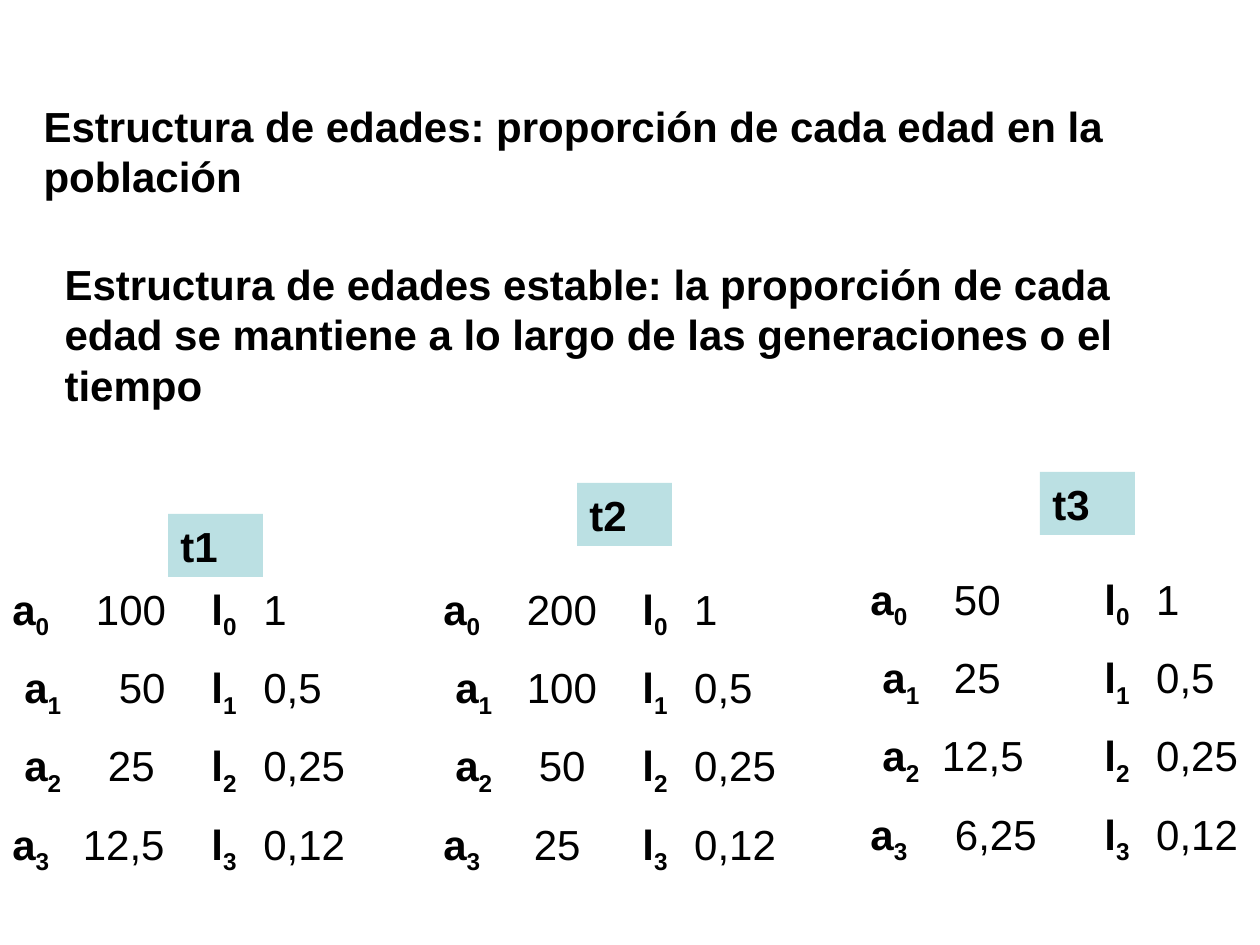
from lxml.etree import SubElement
from pptx import Presentation
from pptx.dml.color import RGBColor
from pptx.enum.shapes import MSO_SHAPE
from pptx.enum.text import MSO_ANCHOR, MSO_AUTO_SIZE, PP_ALIGN
from pptx.oxml.ns import qn
from pptx.util import Pt

EMU_PER_PX = 914400 / 126
LABEL_FILL = "BBE0E3"
LABEL_W, LABEL_H = 95, 63
INDENT = 12
SPACE_W = 12
SURVIVAL_GAP = 27
SURVIVAL = ["1", "0,5", "0,25", "0,12"]

GENERATIONS = [
    dict(name="t1", label=(168, 514), ages=(0, 577, 189, 368), survival=(199, 577, 168, 330),
         counts=["100", "50", "25", "12,5"], gaps=[47, 58, 47, 34]),
    dict(name="t2", label=(577, 483), ages=(431, 577, 189, 368), survival=(630, 577, 179, 330),
         counts=["200", "100", "50", "25"], gaps=[47, 35, 47, 54]),
    dict(name="t3", label=(1040, 472), ages=(858, 567, 223, 290), survival=(1092, 567, 168, 330),
         counts=["50", "25", "12,5", "6,25"], gaps=[47, 35, 23, 48]),
]


def px(n):
    return round(n * EMU_PER_PX)


def color(value):
    return RGBColor.from_string(value)


def place(sp, box):
    sp.left, sp.top, sp.width, sp.height = map(px, box)


def setup_frame(sp):
    tf = sp.text_frame
    tf.word_wrap = True
    tf.auto_size = MSO_AUTO_SIZE.SHAPE_TO_FIT_TEXT
    tf.vertical_anchor = MSO_ANCHOR.TOP
    return tf


def format_paragraph(p, indent=0):
    p.alignment = PP_ALIGN.LEFT
    pPr = p._p.get_or_add_pPr()
    pPr.set("marL", "0")
    pPr.set("indent", str(px(indent)))
    SubElement(SubElement(pPr, qn("a:spcBef")), qn("a:spcPct"), val="50000")
    SubElement(pPr, qn("a:buNone"))


def add_run(p, text, bold=True, baseline=0, spacing=0):
    r = p.add_run()
    r.text = text
    r.font.name = "Arial"
    r.font.size = Pt(24)
    r.font.bold = bold
    r.font.color.rgb = color("000000")
    rPr = r._r.get_or_add_rPr()
    if baseline:
        rPr.set("baseline", str(baseline * 1000))
    if spacing:
        rPr.set("spc", str(round(px(spacing) / Pt(1) * 100)))


def fill_text(sp, text):
    p = setup_frame(sp).paragraphs[0]
    format_paragraph(p)
    add_run(p, text)


def add_box(s, box, fill):
    sp = s.shapes.add_shape(MSO_SHAPE.RECTANGLE, *map(px, box))
    sp.shadow.inherit = False
    sp.fill.solid()
    sp.fill.fore_color.rgb = color(fill)
    sp.line.fill.background()
    return sp


def add_column(s, box, letter, values, gaps, indents):
    tf = setup_frame(add_box(s, box, "FFFFFF"))
    for i, (value, gap, indent) in enumerate(zip(values, gaps, indents)):
        p = tf.add_paragraph() if i else tf.paragraphs[0]
        format_paragraph(p, indent)
        add_run(p, letter)
        add_run(p, str(i), baseline=-25)
        add_run(p, " ", bold=False, spacing=gap - SPACE_W)
        add_run(p, value, bold=False)


def add_generation(s, name, label, ages, survival, counts, gaps):
    add_column(s, ages, "a", counts, gaps, [0, INDENT, INDENT, 0])
    add_column(s, survival, "l", SURVIVAL, [SURVIVAL_GAP] * 4, [0] * 4)
    fill_text(add_box(s, (*label, LABEL_W, LABEL_H), LABEL_FILL), name)


def add_definitions(s):
    title, body = s.shapes.title, s.placeholders[1]
    place(title, (31, 94, 1105, 114))
    place(body, (52, 252, 1104, 164))
    fill_text(title, "Estructura de edades: proporción de cada edad en la población")
    fill_text(body, "Estructura de edades estable: la proporción de cada edad "
                    "se mantiene a lo largo de las generaciones o el tiempo")


def main():
    prs = Presentation()
    prs.slide_width, prs.slide_height = px(1260), px(945)
    s = prs.slides.add_slide(prs.slide_layouts[1])
    s.background.fill.solid()
    s.background.fill.fore_color.rgb = color("FFFFFF")
    add_definitions(s)
    for generation in GENERATIONS:
        add_generation(s, **generation)
    prs.save("out.pptx")


if __name__ == "__main__":
    main()
